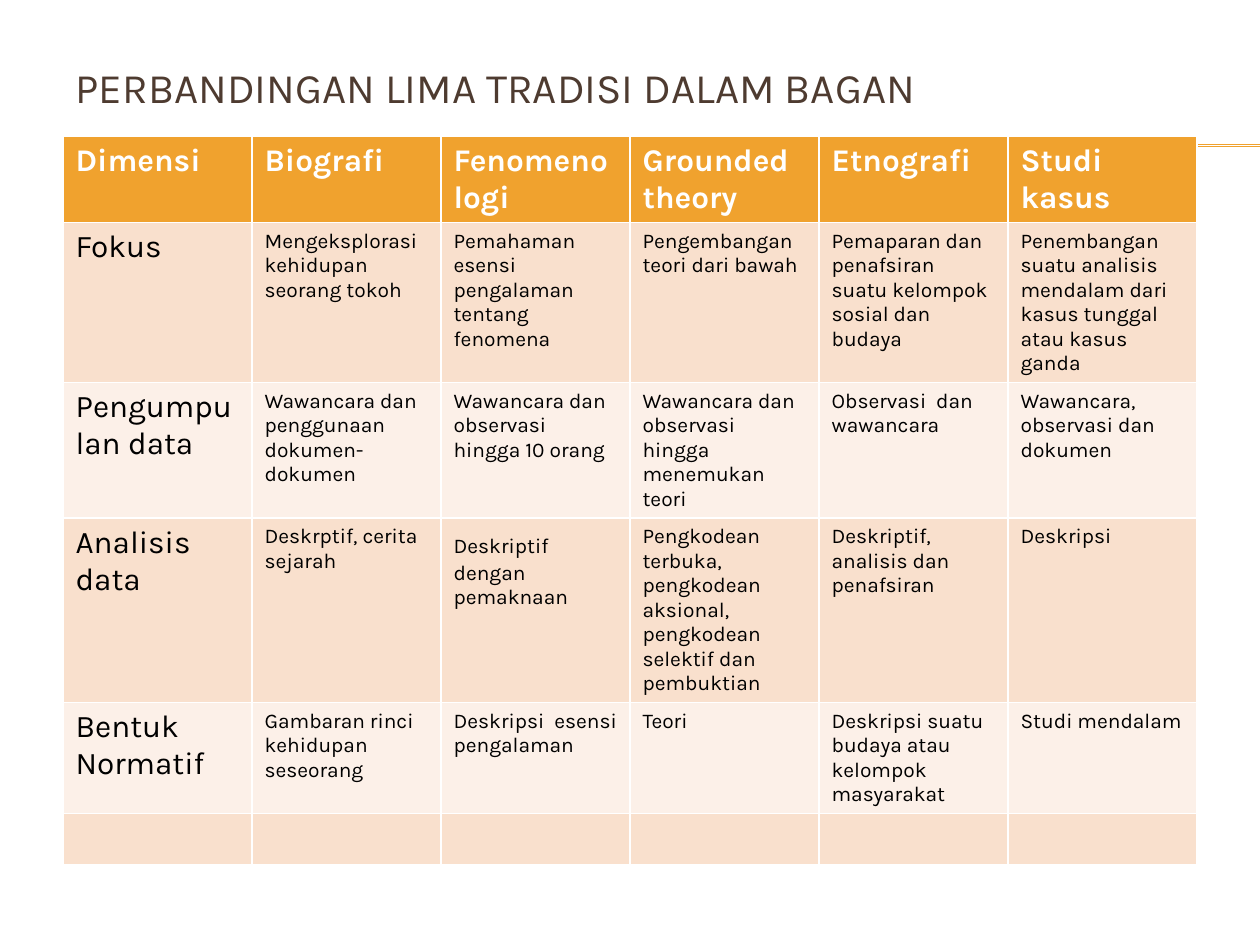
import pptx
import pptx.dml.color
import pptx.enum.shapes
import pptx.enum.text
import pptx.util
from lxml import etree
from pptx.util import Cm

FONT = "Karla"
GOLD, BROWN, WHITE, BLACK = "F0A22E", "4E3B30", "FFFFFF", "000000"
BANDS = ("F9E0CD", "FCF0E8")
BIG, SMALL = 18, 12

TITLE = "PERBANDINGAN LIMA TRADISI DALAM BAGAN"
HEAD = ["Dimensi", "Biografi", "Fenomenologi", "Grounded theory",
        "Etnografi", "Studi kasus"]
# A cell is a string, or a list of (text, size) runs.
BODY = [
    ["Fokus",
     "Mengeksplorasi kehidupan seorang tokoh",
     "Pemahaman esensi pengalaman tentang fenomena",
     "Pengembangan teori dari bawah",
     "Pemaparan dan penafsiran suatu kelompok sosial dan budaya",
     "Penembangan suatu analisis mendalam dari kasus tunggal  atau kasus ganda"],
    ["Pengumpulan data",
     "Wawancara dan penggunaan dokumen-dokumen",
     "Wawancara dan observasi   hingga 10 orang",
     "Wawancara dan observasi hingga menemukan teori",
     "Observasi  dan wawancara",
     "Wawancara, observasi dan dokumen"],
    ["Analisis data",
     "Deskrptif, cerita sejarah",
     [("Deskriptif", SMALL), ("  ", BIG), ("dengan pemaknaan", SMALL)],
     "Pengkodean terbuka, pengkodean aksional, pengkodean selektif dan pembuktian",
     "Deskriptif, analisis dan penafsiran",
     "Deskripsi"],
    ["Bentuk Normatif",
     "Gambaran rinci kehidupan seseorang",
     "Deskripsi  esensi pengalaman",
     "Teori",
     "Deskripsi suatu budaya atau kelompok masyarakat",
     "Studi mendalam"],
    [""] * len(HEAD),
]

WIDE, HIGH = 25.4, 19.05
LEFT, SPAN = 1.27, 22.86
TOP, TALL, ROW = 2.74, 14, 1.03
RULES = (2.92, 2.95)


def tint(hue):
    return pptx.dml.color.RGBColor.from_string(hue)


def write(para, text, size, hue, bold=False):
    run = para.add_run()
    run.text = text
    font = run.font
    font.name, font.size, font.bold = FONT, pptx.util.Pt(size), bold
    font.color.rgb = tint(hue)


def rule(slide, y):
    """Draw a thin gold line that runs off to the right edge."""
    line = slide.shapes.add_connector(
        pptx.enum.shapes.MSO_CONNECTOR.STRAIGHT,
        Cm(1.42), Cm(y), Cm(WIDE), Cm(y))
    line.line.color.rgb = tint(GOLD)
    line.line.width = pptx.util.Pt(0.75)
    etree.SubElement(line._element.spPr, pptx.oxml.ns.qn("a:effectLst"))


def head(slide):
    title = slide.shapes.title
    title.left, title.top = Cm(LEFT), Cm(0.76)
    title.width, title.height = Cm(SPAN), Cm(1.98)
    frame = title.text_frame
    frame.auto_size = pptx.enum.text.MSO_AUTO_SIZE.NONE
    frame.vertical_anchor = pptx.enum.text.MSO_ANCHOR.MIDDLE
    para = frame.paragraphs[0]
    para.alignment = pptx.enum.text.PP_ALIGN.LEFT
    write(para, TITLE, 24, BROWN)


def chart(slide):
    """Add the comparison table; rows grow to fit their text."""
    rows = [HEAD] + BODY
    box = slide.shapes.add_table(
        len(rows), len(HEAD), Cm(LEFT), Cm(TOP), Cm(SPAN), Cm(TALL))
    table = box.table
    for r, row in enumerate(rows):
        table.rows[r].height = Cm(ROW)
        for c, item in enumerate(row):
            cell = table.cell(r, c)
            cell.fill.solid()
            cell.fill.fore_color.rgb = tint(BANDS[(r - 1) % 2] if r else GOLD)
            size = SMALL if r and c else BIG
            runs = [(item, size)] if isinstance(item, str) else item
            for text, size in runs:
                if text:
                    write(cell.text_frame.paragraphs[0], text, size,
                          BLACK if r else WHITE, r == 0)
    box.height = Cm(TALL)


def main():
    deck = pptx.Presentation()
    deck.slide_width, deck.slide_height = Cm(WIDE), Cm(HIGH)
    slide = deck.slides.add_slide(deck.slide_layouts[5])
    for y in RULES:
        rule(slide, y)
    head(slide)
    chart(slide)
    deck.save("out.pptx")


if __name__ == "__main__":
    main()
